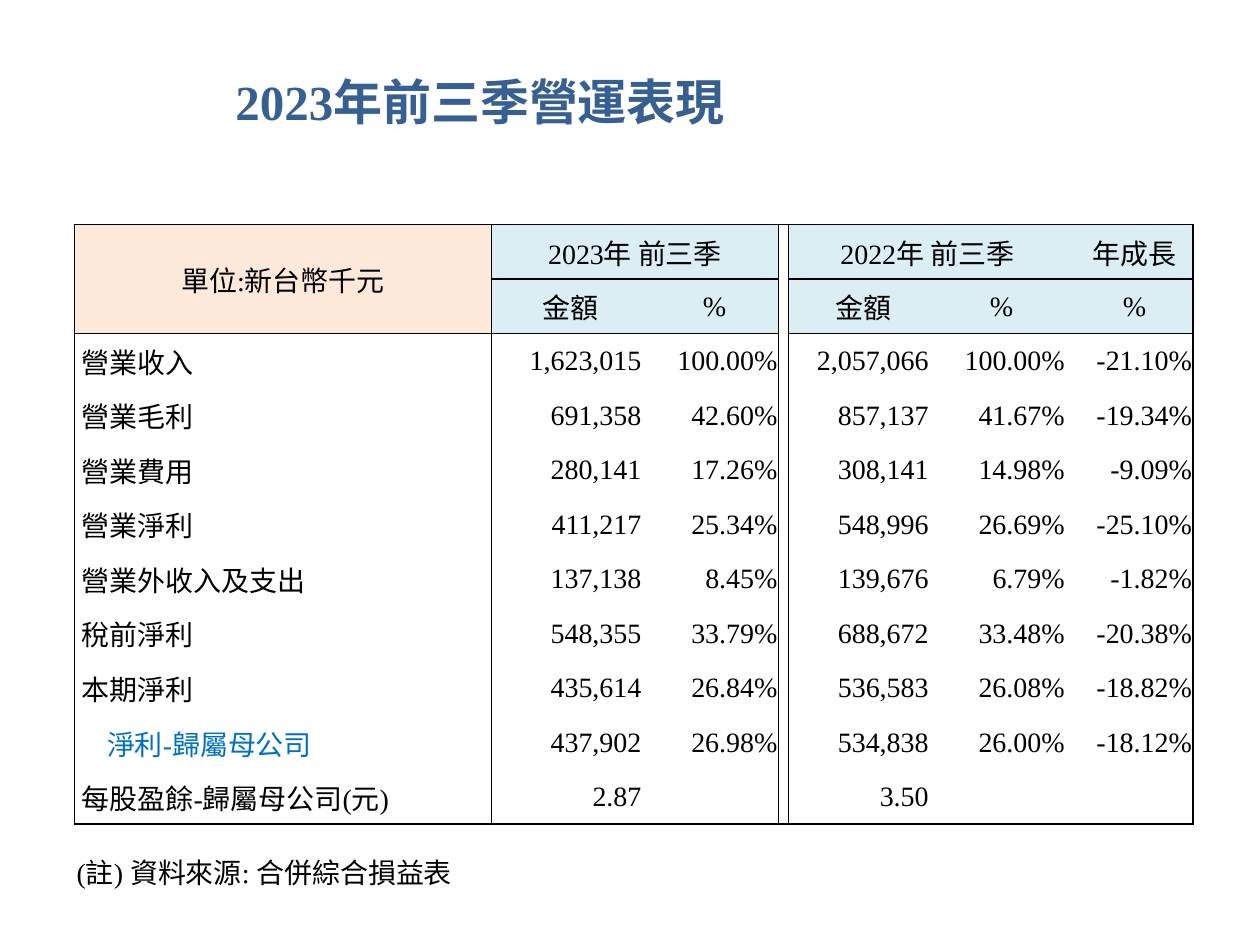
from dataclasses import dataclass

from lxml import etree
from pptx import Presentation
from pptx.dml.color import RGBColor
from pptx.enum.text import MSO_ANCHOR, MSO_AUTO_SIZE, PP_ALIGN
from pptx.oxml.ns import qn
from pptx.util import Inches, Pt

MIDDLE = MSO_ANCHOR.MIDDLE
GROW = MSO_AUTO_SIZE.SHAPE_TO_FIT_TEXT
LEFT, CENTER, RIGHT = PP_ALIGN.LEFT, PP_ALIGN.CENTER, PP_ALIGN.RIGHT


@dataclass(frozen=True)
class Theme:
    font: str = "Times New Roman"
    title: str = "376092"
    ink: str = "000000"
    accent: str = "0070C0"
    peach: str = "FDE9D9"
    sky: str = "DBEEF3"
    large: int = 28
    body: int = 16
    line: int = 1


THEME = Theme()
WIDTHS = (3.31, 1.26, 1.02, 0.08, 1.18, 1.02, 0.08, 0.93)
STARTS, ENDS = (0, 1, 3, 4), (0, 2, 3, 7)
AMOUNTS = (1, 4)
GAP = 3
HEADS = 2
CHILD = "淨利-歸屬母公司"
ROWS = (
    ("單位:新台幣千元", "2023年 前三季", "", "", "2022年 前三季", "", "", "年成長"),
    ("", "金額", "%", "", "金額", "%", "", "%"),
    ("營業收入", "1,623,015", "100.00%", "", "2,057,066", "100.00%", "", "-21.10%"),
    ("營業毛利", "691,358", "42.60%", "", "857,137", "41.67%", "", "-19.34%"),
    ("營業費用", "280,141", "17.26%", "", "308,141", "14.98%", "", "-9.09%"),
    ("營業淨利", "411,217", "25.34%", "", "548,996", "26.69%", "", "-25.10%"),
    ("營業外收入及支出", "137,138", "8.45%", "", "139,676", "6.79%", "", "-1.82%"),
    ("稅前淨利", "548,355", "33.79%", "", "688,672", "33.48%", "", "-20.38%"),
    ("本期淨利", "435,614", "26.84%", "", "536,583", "26.08%", "", "-18.82%"),
    (CHILD, "437,902", "26.98%", "", "534,838", "26.00%", "", "-18.12%"),
    ("每股盈餘-歸屬母公司(元)", "2.87", "", "", "3.50", "", "", ""),
)


def style(para, size, color, bold=False):
    font = para.font
    font.name = THEME.font
    font.size = Pt(size)
    font.bold = bold
    font.color.rgb = RGBColor.from_string(color)


def add_text(slide, box, text, size, color, bold=False):
    frame = slide.shapes.add_textbox(*map(Inches, box)).text_frame
    frame.word_wrap = True
    frame.auto_size = GROW
    frame.text = text
    style(frame.paragraphs[0], size, color, bold)


def add_edges(cell, sides):
    props = cell._tc.get_or_add_tcPr()
    for side in "LRTB":
        line = etree.SubElement(props, qn(f"a:ln{side}"), w=str(Pt(THEME.line)))
        if side in sides:
            fill = etree.SubElement(line, qn("a:solidFill"))
            etree.SubElement(fill, qn("a:srgbClr"), val=THEME.ink)
        else:
            etree.SubElement(line, qn("a:noFill"))


def get_sides(cell, row, col):
    last = row + cell.span_height - 1
    inner = col != GAP
    tests = {
        "L": col in STARTS,
        "R": col + cell.span_width - 1 in ENDS,
        "T": row == 0 or (inner and row <= HEADS),
        "B": last == len(ROWS) - 1 or (inner and last < HEADS),
    }
    return [side for side, shown in tests.items() if shown]


def fill_cell(cell, row, col, text):
    add_edges(cell, get_sides(cell, row, col))
    head = row < HEADS
    if head and col != GAP:
        cell.fill.solid()
        tint = THEME.sky if col else THEME.peach
        cell.fill.fore_color.rgb = RGBColor.from_string(tint)
    else:
        cell.fill.background()
    cell.vertical_anchor = MIDDLE
    cell.margin_left = cell.margin_right = cell.margin_top = Inches(0.01)
    cell.margin_bottom = 0
    child = text == CHILD
    if not head and col == 0:
        cell.margin_left = Inches(0.26 if child else 0.06)
    if not head and col in AMOUNTS:
        cell.margin_right = Inches(0.07)
    cell.text = text
    para = cell.text_frame.paragraphs[0]
    para.alignment = CENTER if head else RIGHT if col else LEFT
    style(para, THEME.body, THEME.accent if child else THEME.ink)


def add_grid(slide, box):
    shape = slide.shapes.add_table(len(ROWS), len(WIDTHS), *map(Inches, box))
    table = shape.table
    table.first_row = table.horz_banding = False
    for column, width in zip(table.columns, WIDTHS):
        column.width = Inches(box[2] * width / sum(WIDTHS))
    table.cell(0, 0).merge(table.cell(1, 0))
    for col in AMOUNTS:
        table.cell(0, col).merge(table.cell(0, col + 1))
    for row, texts in enumerate(ROWS):
        for col, text in enumerate(texts):
            fill_cell(table.cell(row, col), row, col, text)


def main():
    deck = Presentation()
    deck.slide_width, deck.slide_height = Inches(10), Inches(7.5)
    slide = deck.slides.add_slide(deck.slide_layouts[6])
    add_text(slide, (1.77, 0.52, 4.25, 0.57), "2023年前三季營運表現",
             THEME.large, THEME.title, True)
    add_text(slide, (0.51, 6.74, 3.22, 0.37), "(註) 資料來源: 合併綜合損益表",
             THEME.body, THEME.ink)
    add_grid(slide, (0.59, 1.78, 8.88, 4.76))
    deck.save("out.pptx")


if __name__ == "__main__":
    main()
